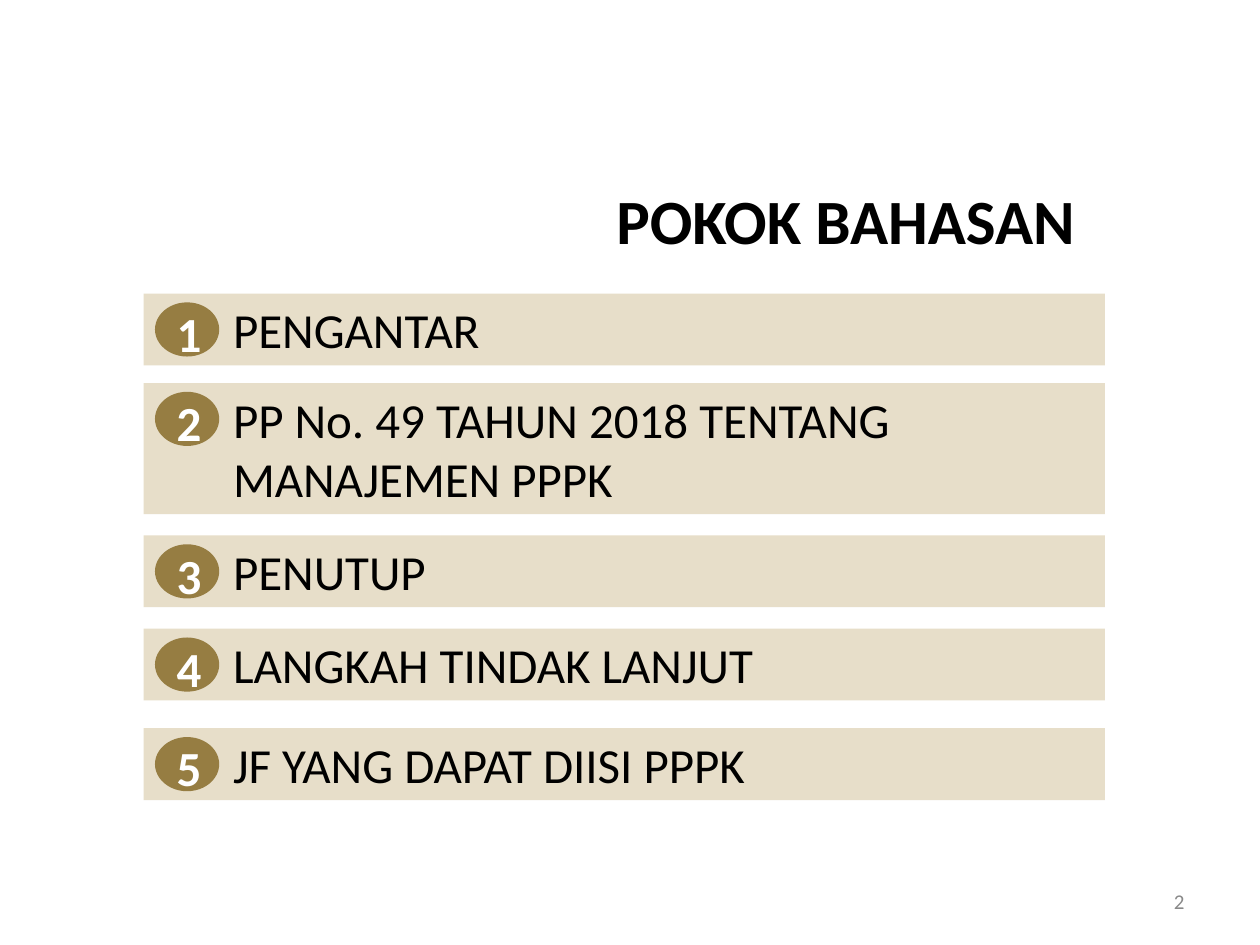
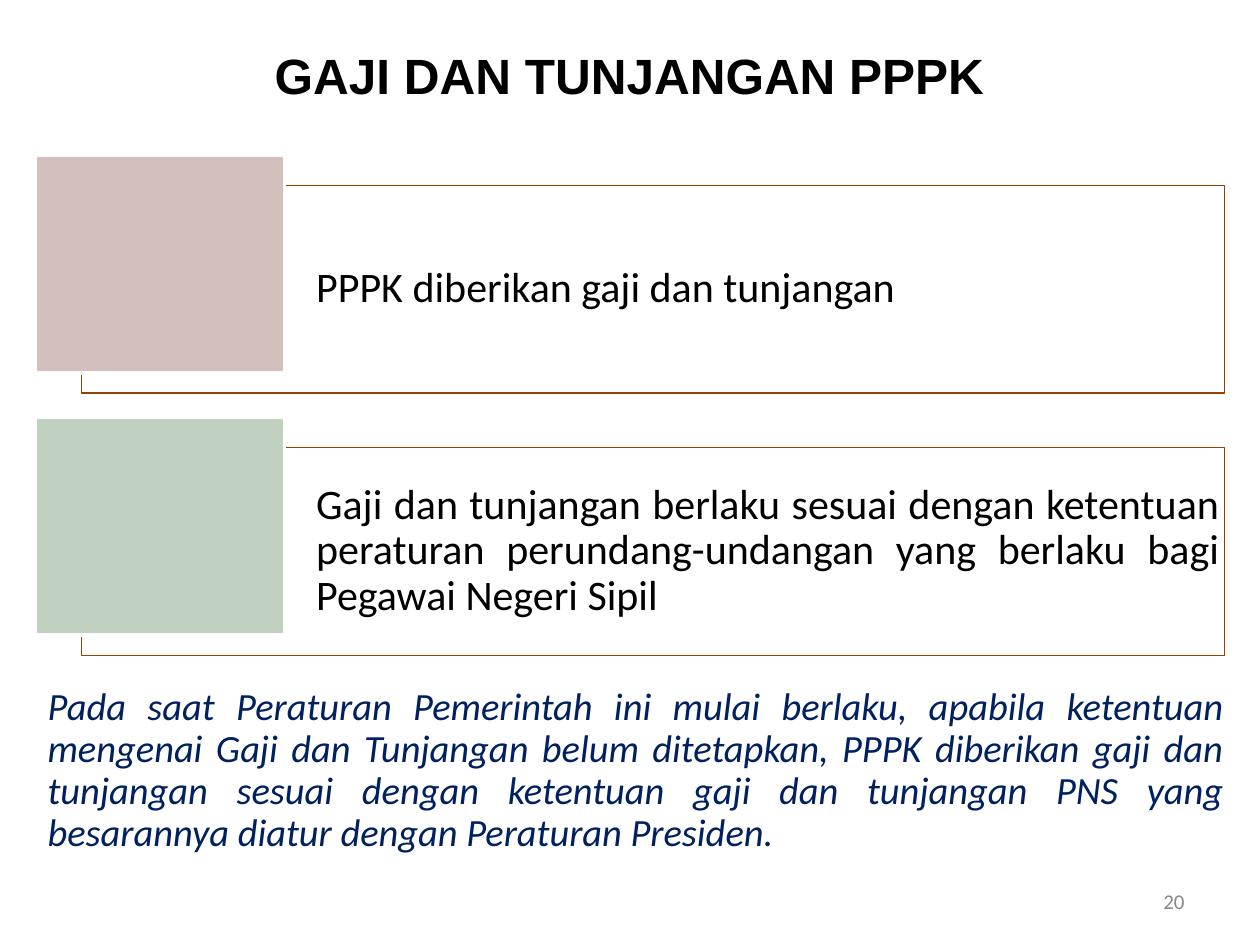
from pptx import Presentation
from pptx.dml.color import RGBColor
from pptx.enum.shapes import MSO_SHAPE
from pptx.enum.text import MSO_ANCHOR, PP_ALIGN
from pptx.util import Inches, Pt

BLACK = RGBColor(0x00, 0x00, 0x00)
WHITE = RGBColor(0xFF, 0xFF, 0xFF)
GREY = RGBColor(0x89, 0x89, 0x89)
SAND = RGBColor(0xE7, 0xDE, 0xC9)
GOLD = RGBColor(0x96, 0x7D, 0x42)
RUST = RGBColor(0x96, 0x41, 0x01)
ROSE = RGBColor(0xD3, 0xC0, 0xBD)
SAGE = RGBColor(0xC0, 0xD2, 0xBF)
NAVY = RGBColor(0x00, 0x20, 0x60)

PAD = (0.1, 0.05, 0.1, 0.05)

# Top, height and wording of each agenda bar
TOPICS = [
    (2.33, 0.57, "PENGANTAR"),
    (3.04, 1.04, "PP No. 49 TAHUN 2018 TENTANG MANAJEMEN PPPK"),
    (4.25, 0.57, "PENUTUP"),
    (4.99, 0.57, "LANGKAH TINDAK LANJUT"),
    (5.78, 0.57, "JF YANG DAPAT DIISI PPPK"),
]
RULES = [
    (ROSE, "PPPK diberikan gaji dan tunjangan"),
    (SAGE, "Gaji dan tunjangan berlaku sesuai dengan ketentuan peraturan "
           "perundang-undangan yang berlaku bagi Pegawai Negeri Sipil"),
]
NOTE = ("Pada saat Peraturan Pemerintah ini mulai berlaku, apabila ketentuan "
        "mengenai Gaji dan Tunjangan belum ditetapkan, PPPK diberikan gaji dan "
        "tunjangan sesuai dengan ketentuan gaji dan tunjangan PNS yang "
        "besarannya diatur dengan Peraturan Presiden.")


def write(shape, text, size=28, font="Calibri", color=BLACK, bold=False,
          italic=False, align=PP_ALIGN.LEFT, anchor=MSO_ANCHOR.TOP,
          pad=PAD, wrap=True, space=None):
    frame = shape.text_frame
    frame.word_wrap = wrap
    frame.vertical_anchor = anchor
    (frame.margin_left, frame.margin_top,
     frame.margin_right, frame.margin_bottom) = map(Inches, pad)
    para = frame.paragraphs[0]
    para.alignment = align
    if space:
        para.line_spacing = space
    run = para.add_run()
    run.text = text
    face = run.font
    face.name, face.size = font, Pt(size)
    face.bold, face.italic = bold, italic
    face.color.rgb = color


def label(slide, box, text, **style):
    write(slide.shapes.add_textbox(*map(Inches, box)), text, **style)


def block(slide, box, fill, kind=MSO_SHAPE.RECTANGLE, line=None, width=1):
    shape = slide.shapes.add_shape(kind, *map(Inches, box))
    shape.shadow.inherit = False
    shape.fill.solid()
    shape.fill.fore_color.rgb = fill
    if line is None:
        shape.line.fill.background()
    else:
        shape.line.color.rgb = line
        shape.line.width = Pt(width)
    return shape


def new_slide(deck, number):
    slide = deck.slides.add_slide(deck.slide_layouts[6])
    label(slide, (7.17, 6.95, 2.33, 0.4), number, size=12, color=GREY,
          align=PP_ALIGN.RIGHT, anchor=MSO_ANCHOR.MIDDLE)
    return slide


def topic_bar(slide, box, number, text):
    left, top, _, _ = box
    write(block(slide, box, SAND), text, pad=(0.71, 0.05, 0.1, 0.05))
    # Number badge at the start of the bar
    badge = block(slide, (left + 0.09, top + 0.07, 0.51, 0.43), GOLD,
                  MSO_SHAPE.OVAL)
    write(badge, number, color=WHITE, bold=True, align=PP_ALIGN.CENTER,
          anchor=MSO_ANCHOR.MIDDLE, pad=(0.03, 0.05, 0, 0), wrap=False)


def rule_card(slide, box, tint, text):
    left, top, wide, high = box
    # Outlined panel, then the tinted tile over its corner
    panel = block(slide, (left + 0.37, top + 0.24, wide - 0.37, high - 0.24),
                  WHITE, line=RUST, width=0.75)
    write(panel, text, size=24, align=PP_ALIGN.JUSTIFY,
          anchor=MSO_ANCHOR.MIDDLE, pad=(1.86, 0.04, 0.04, 0.04), space=0.9)
    block(slide, (left, top, 1.98, 1.73), tint, line=WHITE, width=2)


def agenda(deck):
    slide = new_slide(deck, "2")
    label(slide, (1.54, 1.39, 7.09, 0.71), "POKOK BAHASAN", size=36,
          bold=True, align=PP_ALIGN.RIGHT)
    for number, (top, high, text) in enumerate(TOPICS, 1):
        topic_bar(slide, (1.14, top, 7.63, high), str(number), text)


def salary(deck):
    slide = new_slide(deck, "20")
    label(slide, (0.5, 0.21, 9, 0.76), "GAJI DAN TUNJANGAN PPPK", size=28.3,
          font="Arial", bold=True, align=PP_ALIGN.CENTER,
          anchor=MSO_ANCHOR.MIDDLE)
    for row, (tint, text) in enumerate(RULES):
        rule_card(slide, (0.28, 1.23 + row * 2.08, 9.44, 1.89), tint, text)
    # Closing note
    label(slide, (0.28, 5.4, 9.53, 1.45), NOTE, size=22, color=NAVY,
          italic=True, align=PP_ALIGN.JUSTIFY, space=Pt(24))


def main():
    deck = Presentation()
    deck.slide_width, deck.slide_height = Inches(10), Inches(7.5)
    agenda(deck)
    salary(deck)
    deck.save("out.pptx")


if __name__ == "__main__":
    main()
